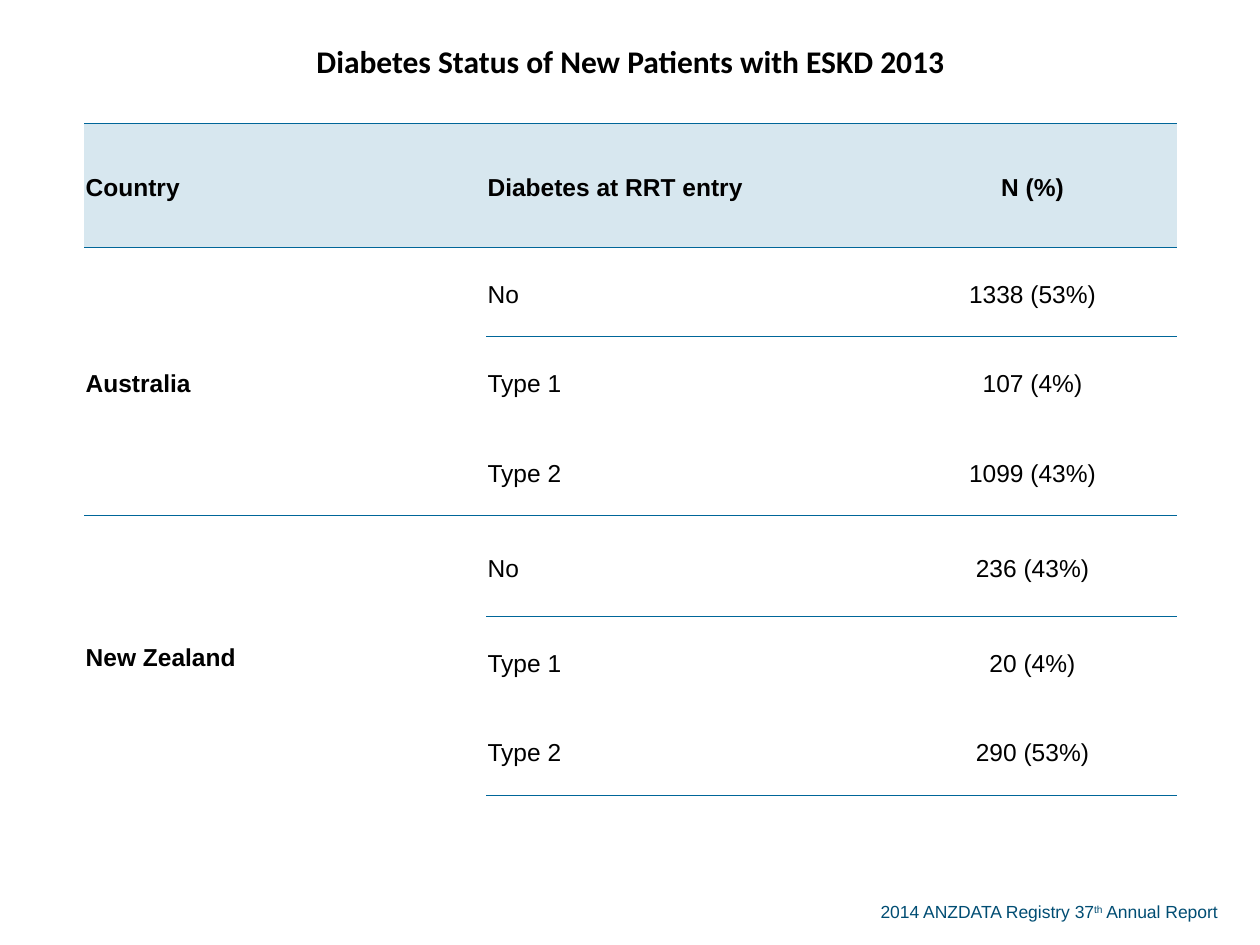
from lxml import etree
from pptx import Presentation
from pptx.dml.color import RGBColor
from pptx.enum.text import MSO_ANCHOR, PP_ALIGN
from pptx.oxml.ns import qn
from pptx.util import Inches, Pt

LEFT, CENTER = PP_ALIGN.LEFT, PP_ALIGN.CENTER
MIDDLE = MSO_ANCHOR.MIDDLE
PLAIN_TABLE_STYLE = "{2D5ABB26-0587-4C30-8999-92F81FD0307C}"
WIDTH, HEIGHT = 10, 7.5

TITLE = "Diabetes Status of New Patients with ESKD 2013"
HEADINGS = ("Country", "Diabetes at RRT entry", "N (%)")
COUNTRIES = {
    "Australia": {"No": "1338 (53%)", "Type 1": "107 (4%)", "Type 2": "1099 (43%)"},
    "New Zealand": {"No": "236 (43%)", "Type 1": "20 (4%)", "Type 2": "290 (53%)"},
}
COLUMN_SHARES = (0.319, 0.319, 0.229)
ROW_HEIGHTS = (0.98, 0.98, 0.71, 0.71, 0.71, 0.8, 0.71, 0.71)


def color(hex_code):
    return RGBColor.from_string(hex_code)


class TableSlide:
    INK, RULE, BAND, NOTE = "000000", "006699", "D7E7EF", "004D73"
    FONT, TITLE_FONT = "Arial", "Calibri"

    def __init__(self, slide):
        self.slide = slide

    def style(self, font, size, ink, name=FONT, bold=False):
        font.name, font.size, font.bold = name, Pt(size), bold
        font.color.rgb = color(ink)

    def table(self, left, top, column_shares, row_heights):
        widths = [Inches(share * WIDTH) for share in column_shares]
        heights = [Inches(height) for height in row_heights]
        table = self.slide.shapes.add_table(
            len(heights), len(widths), Inches(left * WIDTH), Inches(top * HEIGHT),
            sum(widths), sum(heights)).table
        for column, width in zip(table.columns, widths):
            column.width = width
        for row, height in zip(table.rows, heights):
            row.height = height
        table.first_row = table.horz_banding = False
        table._tbl.tblPr.find(qn("a:tableStyleId")).text = PLAIN_TABLE_STYLE
        for cell in table.iter_cells():
            cell.margin_left = cell.margin_right = cell.margin_top = Inches(0.01)
            cell.margin_bottom = 0
            cell.vertical_anchor = MIDDLE
        return table

    def title_cell(self, cell, text):
        cell.text = text
        paragraph = cell.text_frame.paragraphs[0]
        paragraph.alignment = CENTER
        self.style(paragraph.font, 18, self.INK, self.TITLE_FONT, True)

    def body_cell(self, cell, text, align=LEFT, bold=False):
        cell.text = text
        paragraph = cell.text_frame.paragraphs[0]
        paragraph.alignment = align
        paragraph.line_spacing = 1.19
        paragraph.space_after = Pt(14)
        self.style(paragraph.font, 14, self.INK, bold=bold)

    def rule(self, table, row, side):
        """Draw a thin line along one side ("a:lnT" or "a:lnB") of a whole row."""
        for cell in table.rows[row].cells:
            line = etree.SubElement(cell._tc.get_or_add_tcPr(), qn(side), w=str(Pt(0.5)))
            fill = etree.SubElement(line, qn("a:solidFill"))
            etree.SubElement(fill, qn("a:srgbClr"), val=self.RULE)

    def fill_row(self, table, row):
        for cell in table.rows[row].cells:
            cell.fill.solid()
            cell.fill.fore_color.rgb = color(self.BAND)

    def source_note(self, left, top, width, height, before, raised, after):
        """Write a line of text whose middle part is superscript."""
        frame = self.slide.shapes.add_textbox(
            Inches(left * WIDTH), Inches(top * HEIGHT),
            Inches(width * WIDTH), Inches(height * HEIGHT)).text_frame
        frame.word_wrap = True
        paragraph = frame.paragraphs[0]
        for text in (before, raised, after):
            run = paragraph.add_run()
            run.text = text
            if text == raised:
                run._r.get_or_add_rPr().set("baseline", "30000")
        self.style(paragraph.font, 10, self.NOTE)


def main():
    deck = Presentation()
    deck.slide_width, deck.slide_height = Inches(WIDTH), Inches(HEIGHT)
    page = TableSlide(deck.slides.add_slide(deck.slide_layouts[6]))
    page.source_note(0.689, 0.947, 0.299, 0.036,
                     "2014 ANZDATA Registry 37", "th", " Annual Report")

    table = page.table(0.067, 0, COLUMN_SHARES, ROW_HEIGHTS)
    table.cell(0, 0).merge(table.cell(0, 2))
    page.title_cell(table.cell(0, 0), TITLE)
    page.rule(table, 0, "a:lnB")

    for column, heading in enumerate(HEADINGS):
        page.body_cell(table.cell(1, column), heading, CENTER if column == 2 else LEFT, True)
    page.rule(table, 1, "a:lnT")
    page.rule(table, 1, "a:lnB")
    page.fill_row(table, 1)

    first = 2
    for country, counts in COUNTRIES.items():
        last = first + len(counts) - 1
        table.cell(first, 0).merge(table.cell(last, 0))
        page.body_cell(table.cell(first, 0), country, bold=True)
        for row, (status, count) in enumerate(counts.items(), first):
            page.body_cell(table.cell(row, 1), status)
            page.body_cell(table.cell(row, 2), count, CENTER)
        page.rule(table, first, "a:lnT")
        page.rule(table, last, "a:lnB")
        first = last + 1

    deck.save("out.pptx")


if __name__ == "__main__":
    main()
